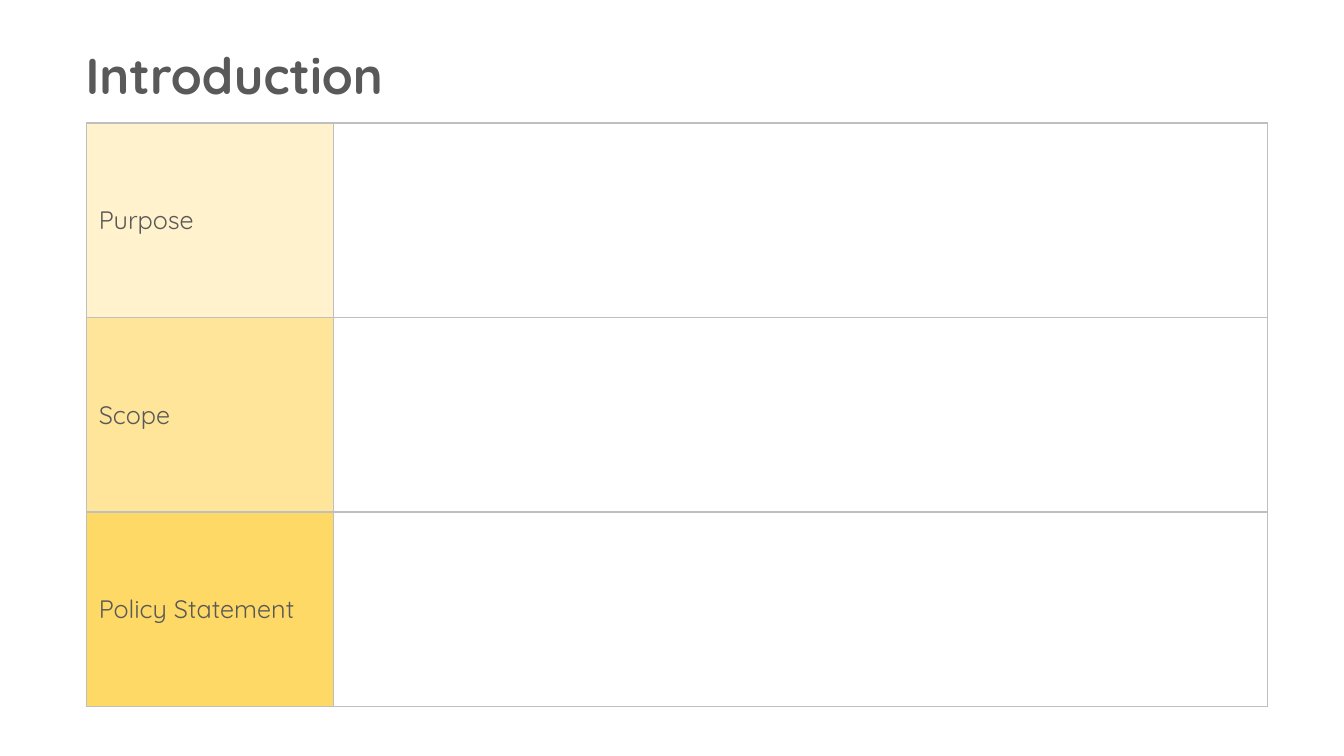
"""Build the Introduction slide with its three-row policy table."""
from lxml import etree
from pptx import Presentation
from pptx.dml.color import RGBColor
from pptx.enum.text import MSO_ANCHOR
from pptx.oxml.ns import qn
from pptx.util import Inches, Pt

TITLE = "Introduction"
SECTIONS = [
    ("Purpose", "light"),
    ("Scope", "medium"),
    ("Policy Statement", "strong"),
]
COLORS = {
    "text": "595959",
    "border": "BFBFBF",
    "light": "FFF2CC",
    "medium": "FFE599",
    "strong": "FFD966",
}
FONT = "Quicksand"
MIDDLE = MSO_ANCHOR.MIDDLE
COL_WIDTHS = (2.45, 9.26)
ROW_HEIGHT = 1.93
TABLE_LEFT, TABLE_TOP = 0.86, 1.22


def rgb(name):
    """Return the named colour."""
    return RGBColor.from_string(COLORS[name])


def style_run(p, size, bold=False):
    """Format the only run of a paragraph."""
    font = p.runs[0].font
    font.name, font.size, font.bold = FONT, Pt(size), bold
    font.color.rgb = rgb("text")


def add_borders(cell):
    """Draw a thin line on all four sides of a cell."""
    props = cell._tc.get_or_add_tcPr()
    for i, side in enumerate(("a:lnL", "a:lnR", "a:lnT", "a:lnB")):
        line = etree.Element(qn(side), w=str(Pt(1)))
        fill = etree.SubElement(line, qn("a:solidFill"))
        etree.SubElement(fill, qn("a:srgbClr"), val=COLORS["border"])
        props.insert(i, line)


def add_title(slide):
    """Add the slide title."""
    box = slide.shapes.add_textbox(Inches(0.75), Inches(0.39), Inches(11), Inches(0.71))
    tf = box.text_frame
    tf.word_wrap = True
    tf.text = TITLE
    style_run(tf.paragraphs[0], 36, True)


def add_sections(slide):
    """Add the table with one labelled row per section."""
    frame = slide.shapes.add_table(
        len(SECTIONS), len(COL_WIDTHS), Inches(TABLE_LEFT), Inches(TABLE_TOP),
        Inches(sum(COL_WIDTHS)), Inches(ROW_HEIGHT * len(SECTIONS)))
    table = frame.table
    table.first_row = table.horz_banding = False
    for column, width in zip(table.columns, COL_WIDTHS):
        column.width = Inches(width)
    for row, (label, color) in zip(table.rows, SECTIONS):
        row.height = Inches(ROW_HEIGHT)
        head, body = row.cells
        head.text = label
        head.vertical_anchor = MIDDLE
        head.margin_left = head.margin_right = Inches(0.05)
        head.margin_top = head.margin_bottom = 0
        p = head.text_frame.paragraphs[0]
        p._p.get_or_add_pPr().set("marL", str(Inches(0.07)))
        style_run(p, 18)
        head.fill.solid()
        head.fill.fore_color.rgb = rgb(color)
        body.fill.background()
        for cell in (head, body):
            add_borders(cell)


def main():
    """Create and save the presentation."""
    prs = Presentation()
    prs.slide_width, prs.slide_height = Inches(13.33), Inches(7.5)
    slide = prs.slides.add_slide(prs.slide_layouts[6])
    add_title(slide)
    add_sections(slide)
    prs.save("out.pptx")


if __name__ == "__main__":
    main()
